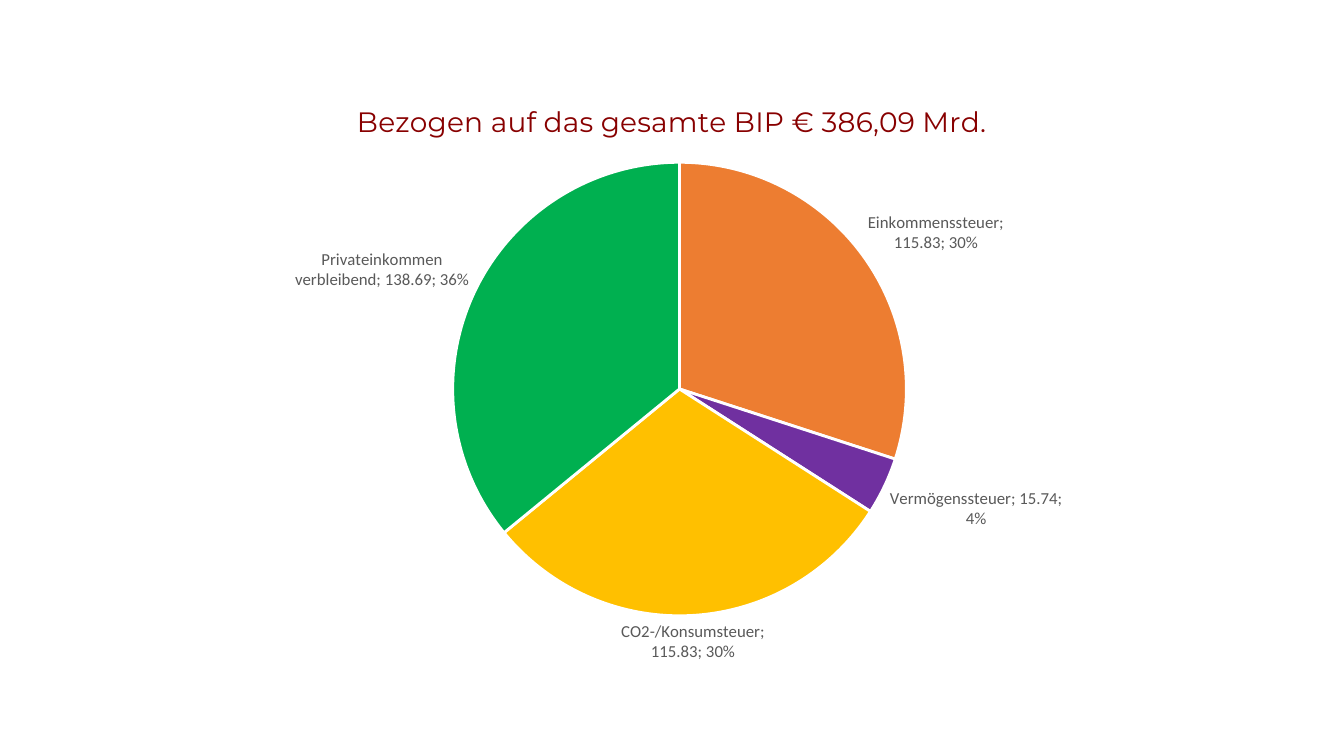
from copy import deepcopy

from lxml import etree
from pptx import Presentation
from pptx import util as u
from pptx.chart.data import CategoryChartData
from pptx.dml.color import RGBColor
from pptx.enum import chart as ch
from pptx.oxml import ns

C15 = "http://schemas.microsoft.com/office/drawing/2012/chart"
LABEL_EXT = "{CE6537A1-D6FC-4f65-9D91-7224C49458BB}"
CHART_W, CHART_H = 8.89, 5.93
SLICES = [
    ("Einkommenssteuer", 115.83, "ED7D31"),
    ("Vermögenssteuer", 15.74, "7030A0"),
    ("CO2-/Konsumsteuer", 115.83, "FFC000"),
    ("Privateinkommen verbleibend", 138.69, "00B050"),
]
LABEL_SIZES = {1: (1.5, 0.42), 3: (1.5, 0.62)}


def rgb(value):
    return RGBColor.from_string(value)


def add(parent, tag, value=None):
    el = etree.SubElement(parent, ns.qn(f"c:{tag}"))
    if value is not None:
        el.set("val", str(value))
    return el


def set_layout(parent, index, x, y, w=None, h=None):
    """Place a chart part, in inches from the chart's corner."""
    for old in parent.findall(ns.qn("c:layout")):
        parent.remove(old)
    layout = etree.Element(ns.qn("c:layout"))
    manual = add(layout, "manualLayout")
    if w:
        add(manual, "layoutTarget", "inner")
    add(manual, "xMode", "edge")
    add(manual, "yMode", "edge")
    add(manual, "x", x / CHART_W)
    add(manual, "y", y / CHART_H)
    if w:
        add(manual, "w", w / CHART_W)
        add(manual, "h", h / CHART_H)
    parent.insert(index, layout)


class Deck:
    font, title_font = "Calibri", "Montserrat"
    label_color, title_color, border = "595959", "880000", "FFFFFF"

    def __init__(self):
        self.prs = Presentation()
        self.prs.slide_width = u.Inches(13.33)
        self.prs.slide_height = u.Inches(7.5)
        self.s = self.prs.slides.add_slide(self.prs.slide_layouts[6])

    def style(self, font, name, size, color):
        font.name, font.size, font.bold = name, u.Pt(size), False
        font.color.rgb = rgb(color)

    def pie(self, slices, x, y):
        names, values, colors = zip(*slices)
        data = CategoryChartData()
        data.categories = names
        data.add_series("Series 1", values)
        frame = self.s.shapes.add_chart(
            ch.XL_CHART_TYPE.PIE, *map(u.Inches, (x, y, CHART_W, CHART_H)), data)
        chart = frame.chart
        chart.has_legend = False
        self.style(chart.font, self.font, 10, "000000")
        plot = chart.plots[0]
        plot.vary_by_categories = True
        for i, color in enumerate(colors):
            fmt = plot.series[0].points[i].format
            fmt.fill.solid()
            fmt.fill.fore_color.rgb = rgb(color)
            fmt.line.color.rgb = rgb(self.border)
            fmt.line.width = u.Pt(2)
        self.labels(plot.series[0].data_labels)
        plot_area = chart._chartSpace.chart.plotArea
        set_layout(plot_area, 0, 2.27, 0.82, 4.5, 4.5)
        return chart

    def labels(self, labels):
        labels.show_category_name = True
        labels.show_value = True
        labels.show_percentage = True
        labels.position = ch.XL_LABEL_POSITION.OUTSIDE_END
        self.style(labels.font, self.font, 12, self.label_color)
        d = labels._element
        d.find(".//" + ns.qn("a:bodyPr")).set("wrap", "square")
        separator = etree.Element(ns.qn("c:separator"))
        separator.text = "; "
        d.find(ns.qn("c:showBubbleSize")).addnext(separator)
        shared = [el for el in d if el.tag != ns.qn("c:showLeaderLines")]
        for n, (i, size) in enumerate(LABEL_SIZES.items()):
            d.insert(n, self.sized_label(i, shared, *size))

    def sized_label(self, i, shared, w, h):
        """Build one slice's label with the shared style and its own box size."""
        label = etree.Element(ns.qn("c:dLbl"))
        add(label, "idx", i)
        label.extend(deepcopy(shared))
        ext = add(add(label, "extLst"), "ext")
        ext.set("uri", LABEL_EXT)
        layout = etree.SubElement(ext, f"{{{C15}}}layout", nsmap={"c15": C15})
        manual = add(layout, "manualLayout")
        add(manual, "w", w / CHART_W)
        add(manual, "h", h / CHART_H)
        return label

    def chart_title(self, chart, words):
        chart.has_title = True
        title = chart.chart_title
        title.include_in_layout = False
        p = title.text_frame.paragraphs[0]
        p.text = words
        self.style(p.runs[0].font, self.title_font, 20, self.title_color)
        set_layout(title._element, 1, 1.27, 0.17)


def main():
    deck = Deck()
    chart = deck.pie(SLICES, 2.22, 0.79)
    deck.chart_title(chart, "Bezogen auf das gesamte BIP € 386,09 Mrd.")
    deck.prs.save("out.pptx")


if __name__ == "__main__":
    main()
